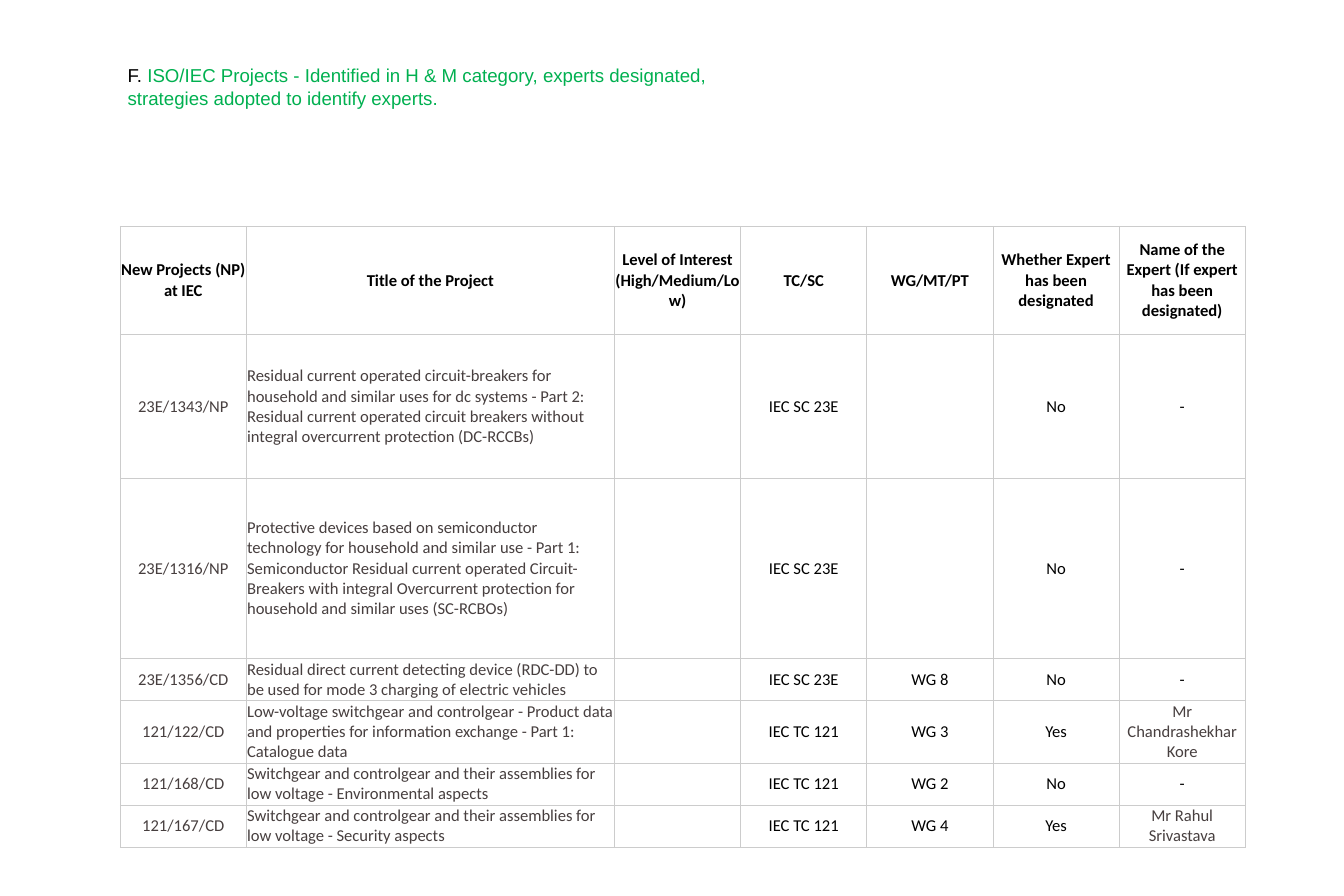
from lxml.etree import SubElement
from pptx import Presentation
from pptx.dml.color import RGBColor
from pptx.enum.text import MSO_ANCHOR as Anchor, PP_ALIGN as Align
from pptx.oxml.ns import qn
from pptx.util import Inches, Pt

BLACK, GREEN, BROWN, GREY = "000000", "00B050", "473F3F", "CCCCCC"

COLUMN_WIDTHS = [1.69, 4.93] + [1.69] * 5
ROW_HEIGHTS = [1.45, 1.93, 2.41, 0.55, 0.82, 0.55, 0.55]
TITLE_COLUMN, EXPERT_COLUMN = 1, 6

HEADINGS = [
    "New Projects (NP) at IEC", "Title of the Project",
    "Level of Interest (High/Medium/Low)", "TC/SC", "WG/MT/PT",
    "Whether Expert has been designated",
    "Name of the Expert (If expert has been designated)",
]
PROJECTS = [
    ["23E/1343/NP",
     "Residual current operated circuit-breakers for household and similar "
     "uses for dc systems - Part 2: Residual current operated circuit "
     "breakers without integral overcurrent protection (DC-RCCBs)",
     "", "IEC SC 23E", "", "No", "-"],
    ["23E/1316/NP",
     "Protective devices based on semiconductor technology for household and "
     "similar use - Part 1: Semiconductor Residual current operated "
     "Circuit-Breakers with integral Overcurrent protection for household "
     "and similar uses (SC-RCBOs)",
     "", "IEC SC 23E", "", "No", "-"],
    ["23E/1356/CD",
     "Residual direct current detecting device (RDC-DD) to be used for mode 3 "
     "charging of electric vehicles",
     "", "IEC SC 23E", "WG 8", "No", "-"],
    ["121/122/CD",
     "Low-voltage switchgear and controlgear - Product data and properties "
     "for information exchange - Part 1: Catalogue data",
     "", "IEC TC 121", "WG 3", "Yes", "Mr Chandrashekhar Kore"],
    ["121/168/CD",
     "Switchgear and controlgear and their assemblies for low voltage - "
     "Environmental aspects",
     "", "IEC TC 121", "WG 2", "No", "-"],
    ["121/167/CD",
     "Switchgear and controlgear and their assemblies for low voltage - "
     "Security aspects",
     "", "IEC TC 121", "WG 4", "Yes", "Mr Rahul Srivastava"],
]


def rgb(value):
    return RGBColor.from_string(value)


def add_run(paragraph, text, font_name, size, color, bold=False):
    run = paragraph.add_run()
    run.text = text
    run.font.name = font_name
    run.font.size = Pt(size)
    run.font.bold = bold
    run.font.color.rgb = rgb(color)


def add_borders(cell, color, width):
    properties = cell._tc.get_or_add_tcPr()
    for side in ("a:lnL", "a:lnR", "a:lnT", "a:lnB"):
        line = SubElement(properties, qn(side), w=str(Pt(width)))
        fill = SubElement(line, qn("a:solidFill"))
        SubElement(fill, qn("a:srgbClr"), val=color)


def fill_cell(cell, text, color, align, bold):
    add_borders(cell, GREY, 0.75)
    cell.fill.background()
    cell.vertical_anchor = Anchor.MIDDLE
    cell.margin_left = cell.margin_right = Inches(0.01)
    cell.margin_top = cell.margin_bottom = Inches(0.01)
    if text:
        paragraph = cell.text_frame.paragraphs[0]
        paragraph.alignment = align
        add_run(paragraph, text, "Calibri", 16, color, bold)


def add_heading(slide):
    heading = slide.shapes.title
    heading.left, heading.top = Inches(1.61), Inches(0.81)
    heading.width, heading.height = Inches(9), Inches(0.71)
    frame = heading.text_frame
    frame.word_wrap = True
    frame.vertical_anchor = Anchor.TOP
    paragraph = frame.paragraphs[0]
    paragraph.alignment = Align.LEFT
    add_run(paragraph, "F. ", "Arial", 18, BLACK)
    add_run(paragraph,
            "ISO/IEC Projects - Identified in H & M category, experts "
            "designated, strategies adopted to identify experts.",
            "Arial", 18, GREEN)


def text_color(row, column, text):
    named_expert = column == EXPERT_COLUMN and text != "-"
    if row > 0 and (column <= TITLE_COLUMN or named_expert):
        return BROWN
    return BLACK


def add_project_table(slide):
    rows = [HEADINGS] + PROJECTS
    table = slide.shapes.add_table(
        len(rows), len(HEADINGS), Inches(1.61), Inches(3.03),
        Inches(sum(COLUMN_WIDTHS)), Inches(sum(ROW_HEIGHTS))).table
    table.horz_banding = False
    for column, width in zip(table.columns, COLUMN_WIDTHS):
        column.width = Inches(width)
    for row, height in zip(table.rows, ROW_HEIGHTS):
        row.height = Inches(height)

    for r, texts in enumerate(rows):
        for c, text in enumerate(texts):
            is_project_title = r > 0 and c == TITLE_COLUMN
            align = Align.LEFT if is_project_title else Align.CENTER
            fill_cell(table.cell(r, c), text, text_color(r, c, text), align,
                      bold=r == 0)


def main():
    deck = Presentation()
    deck.slide_width, deck.slide_height = Inches(18), Inches(12)
    # Title Only layout
    slide = deck.slides.add_slide(deck.slide_layouts[5])
    add_heading(slide)
    add_project_table(slide)
    deck.save("out.pptx")


if __name__ == "__main__":
    main()
